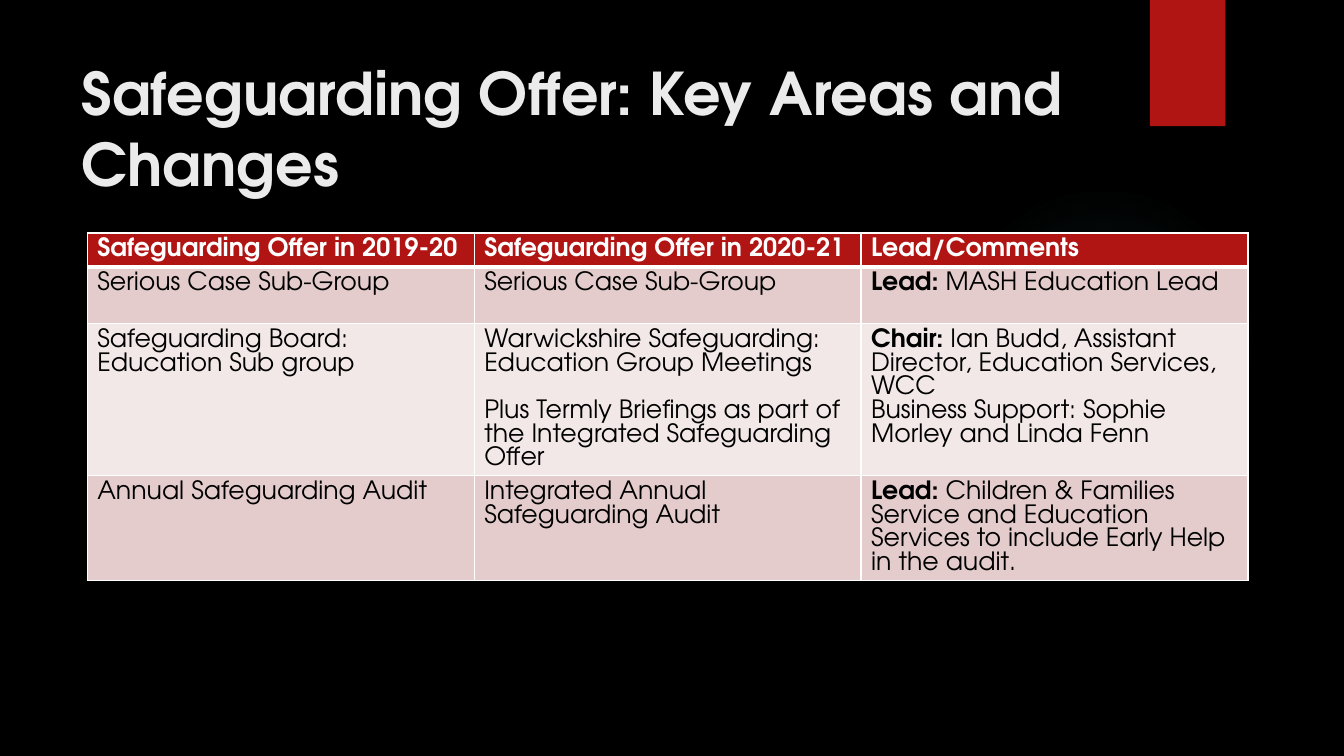
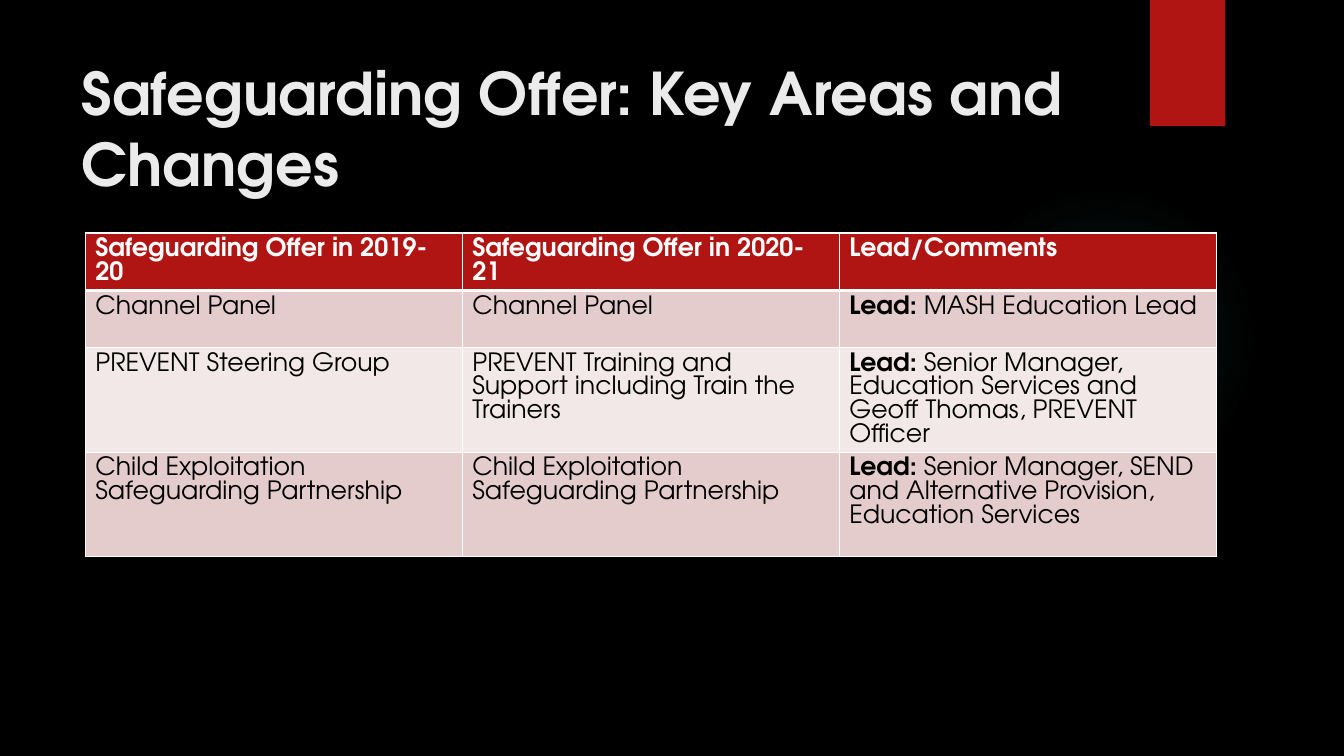
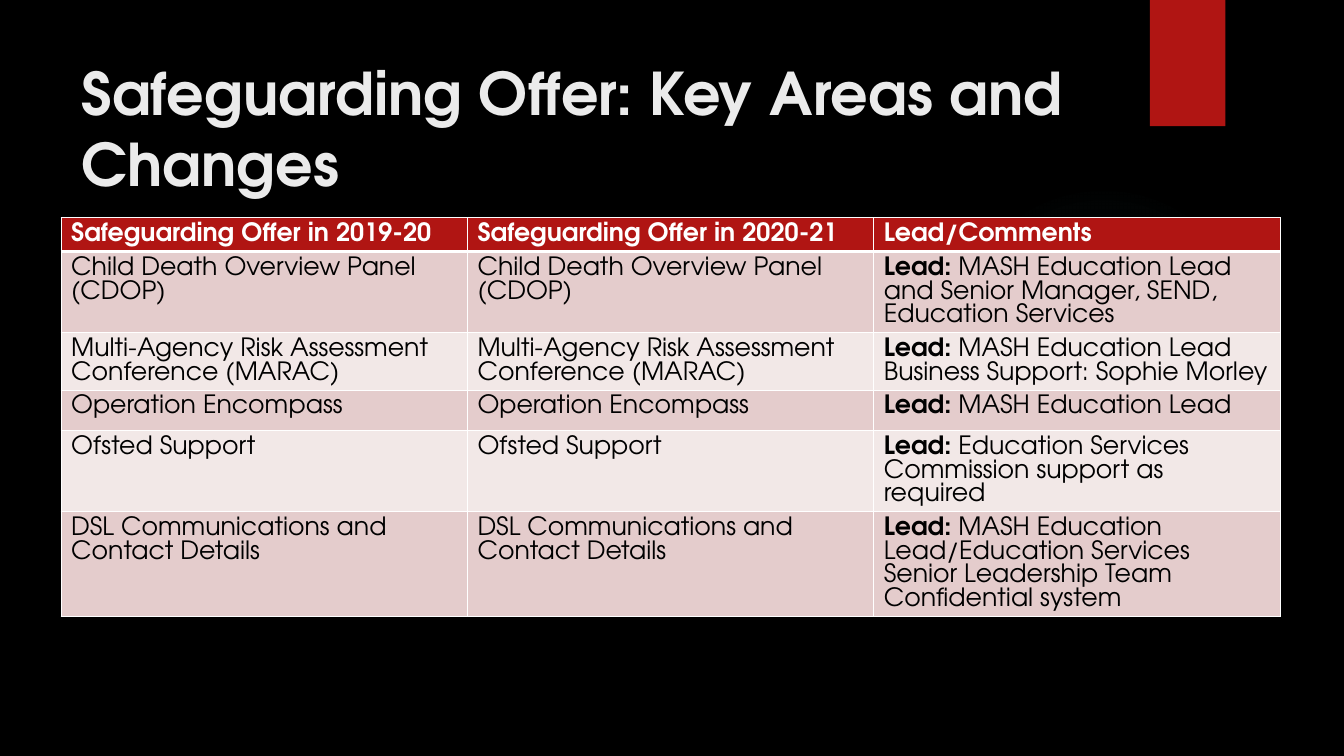
from lxml import etree
from pptx import Presentation
from pptx import util as u
from pptx.dml.color import RGBColor
from pptx.enum import shapes, text
from pptx.oxml import ns

# Shared style
HUES = {"back": "000000", "red": "B01513", "title": "EBEBEB", "white": "FFFFFF",
        "ink": "000000", "dark": "E4CCCC", "pale": "F2E8E7", "glow": "50B9C1"}
FONT = "TeX Gyre Adventor"
TITLE = "Safeguarding Offer: Key Areas and Changes"
HEAD = ["Safeguarding Offer in 2019-20", "Safeguarding Offer in 2020-21",
        "Lead/Comments"]
LINE, PAD = 0.594, 0.25  # height of a table line and of a cell's margins, in cm


def rgb(name):
    return RGBColor.from_string(HUES[name])


def write(frame, words, size=18, hue="ink", bold=False, pitch=16.9):
    """Fill a frame; *stars* mark bold, an empty line becomes space before."""
    frame.word_wrap = True
    for i, block in enumerate(words.split("\n\n")):
        for j, line in enumerate(block.split("\n")):
            para = frame.add_paragraph() if i or j else frame.paragraphs[0]
            para.alignment = text.PP_ALIGN.LEFT
            para.line_spacing = u.Pt(pitch)
            para.space_before = u.Pt(pitch if i and not j else 0)
            for k, part in enumerate(line.split("*")):
                if part:
                    run = para.add_run()
                    run.text = part
                    font = run.font
                    font.name, font.size = FONT, u.Pt(size)
                    font.bold = bold or k % 2 == 1
                    font.color.rgb = rgb(hue)


class Deck:
    def __init__(self):
        self.prs = Presentation()
        self.prs.slide_width, self.prs.slide_height = u.Cm(33.87), u.Cm(19.05)
        fill = self.prs.slide_master.background.fill
        fill.solid()
        fill.fore_color.rgb = rgb("back")

    def page(self):
        self.slide = self.prs.slides.add_slide(self.prs.slide_layouts[5])
        self.glow()
        self.shape(shapes.MSO_SHAPE.RECTANGLE, 28.98, 0, 1.9, 3.18, "red")
        self.title()

    def shape(self, kind, x, y, w, h, hue):
        item = self.slide.shapes.add_shape(kind, u.Cm(x), u.Cm(y), u.Cm(w), u.Cm(h))
        item.shadow.inherit = False
        item.line.fill.background()
        item.fill.solid()
        item.fill.fore_color.rgb = rgb(hue)
        return item

    def glow(self):
        item = self.shape(shapes.MSO_SHAPE.OVAL, 23.9, 4.65, 7.82, 7.82, "glow")
        stops = "".join(
            f'<a:gs pos="{pos}000"><a:srgbClr val="{HUES["glow"]}">'
            f'<a:alpha val="{alpha}000"/></a:srgbClr></a:gs>'
            for pos, alpha in ((0, 7), (36, 6), (69, 0), (100, 0)))
        grad = etree.fromstring(
            f'<a:gradFill {ns.nsdecls("a")}><a:gsLst>{stops}</a:gsLst>'
            '<a:path path="circle"><a:fillToRect l="50000" t="50000" r="50000"'
            ' b="50000"/></a:path></a:gradFill>')
        props = item.element.spPr
        props.replace(props.find(ns.qn("a:solidFill")), grad)

    def title(self):
        item = self.slide.shapes.title
        item.left, item.top = u.Cm(1.8), u.Cm(1.27)
        item.width, item.height = u.Cm(26.14), u.Cm(3.89)
        frame = item.text_frame
        frame.auto_size = text.MSO_AUTO_SIZE.NONE
        frame.vertical_anchor = text.MSO_ANCHOR.MIDDLE
        write(frame, TITLE, size=42, hue="title", bold=True, pitch=50.7)

    def edges(self, cell, top, bottom):
        props = cell._tc.get_or_add_tcPr()
        for i, (side, wide) in enumerate(
                (("L", 1), ("R", 1), ("T", top), ("B", bottom))):
            props.insert(i, etree.fromstring(
                f'<a:ln{side} {ns.nsdecls("a")} w="{u.Pt(wide)}"><a:solidFill>'
                f'<a:srgbClr val="{HUES["white"]}"/></a:solidFill></a:ln{side}>'))

    def table(self, x, y, col, rows, head=1):
        """Each row is its height in lines and its cells."""
        rows = [(head, HEAD)] + rows
        high = [u.Cm(PAD + LINE * count) for count, _ in rows]
        grid = self.slide.shapes.add_table(
            len(rows), len(HEAD), u.Cm(x), u.Cm(y),
            u.Cm(col * len(HEAD)), sum(high)).table
        grid.first_row = grid.horz_banding = False
        for item in grid.columns:
            item.width = u.Cm(col)
        for r, (_, cells) in enumerate(rows):
            grid.rows[r].height = high[r]
            band = ("dark" if r % 2 else "pale") if r else "red"
            for c, words in enumerate(cells):
                cell = grid.cell(r, c)
                cell.fill.solid()
                cell.fill.fore_color.rgb = rgb(band)
                self.edges(cell, 3 if r == 1 else 1, 1 if r else 3)
                write(cell.text_frame, words, hue="ink" if r else "white",
                      bold=not r)


def main():
    deck = Deck()

    # Boards and audit
    deck.page()
    deck.table(2.2, 5.87, 9.75, [
        (2, ["Serious Case Sub-Group", "Serious Case Sub-Group",
             "*Lead:* MASH Education Lead"]),
        (6, ["Safeguarding Board: Education Sub group",
             "Warwickshire Safeguarding: Education Group Meetings\n\n"
             "Plus Termly Briefings as part of the Integrated Safeguarding Offer",
             "*Chair:* Ian Budd, Assistant Director, Education Services, WCC\n"
             "Business Support: Sophie Morley and Linda Fenn"]),
        (4, ["Annual Safeguarding Audit", "Integrated Annual Safeguarding Audit",
             "*Lead:* Children & Families Service and Education Services "
             "to include Early Help in the audit."]),
    ])

    # Prevention and exploitation
    deck.page()
    deck.table(2.15, 5.87, 9.5, [
        (2, ["Channel Panel", "Channel Panel", "*Lead:* MASH Education Lead"]),
        (4, ["PREVENT Steering Group",
             "PREVENT Training and Support including Train the Trainers",
             "*Lead:* Senior Manager, Education Services and Geoff Thomas, "
             "PREVENT Officer"]),
        (4, ["Child Exploitation Safeguarding Partnership",
             "Child Exploitation Safeguarding Partnership",
             "*Lead:* Senior Manager, SEND and Alternative Provision, "
             "Education Services"]),
    ], head=2)

    # Panels and support
    deck.page()
    deck.table(1.54, 5.49, 10.24, [
        (3, ["Child Death Overview Panel (CDOP)",
             "Child Death Overview Panel\n(CDOP)",
             "*Lead:* MASH Education Lead and Senior Manager, SEND, "
             "Education Services"]),
        (2, ["Multi-Agency Risk Assessment Conference (MARAC)",
             "Multi-Agency Risk Assessment Conference (MARAC)",
             "*Lead:* MASH Education Lead\nBusiness Support: Sophie Morley"]),
        (1.3, ["Operation Encompass", "Operation Encompass",
               "*Lead:* MASH Education Lead"]),
        (3, ["Ofsted Support", "Ofsted Support",
             "*Lead:* Education Services\nCommission support as required"]),
        (4, ["DSL Communications and Contact Details",
             "DSL Communications and Contact Details",
             "*Lead:* MASH Education Lead/Education Services Senior "
             "Leadership Team\nConfidential system"]),
    ])
    deck.prs.save("out.pptx")


if __name__ == "__main__":
    main()
